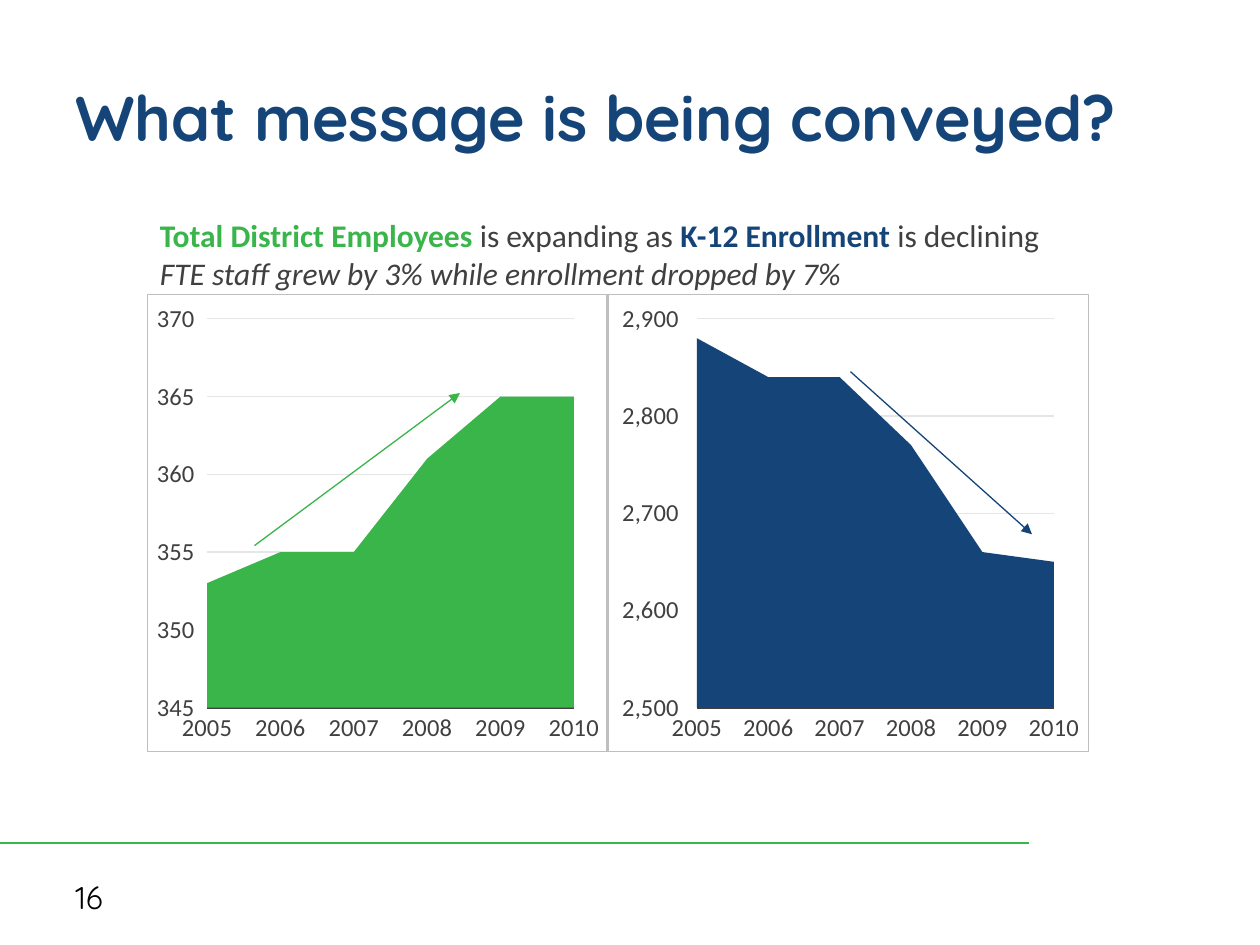
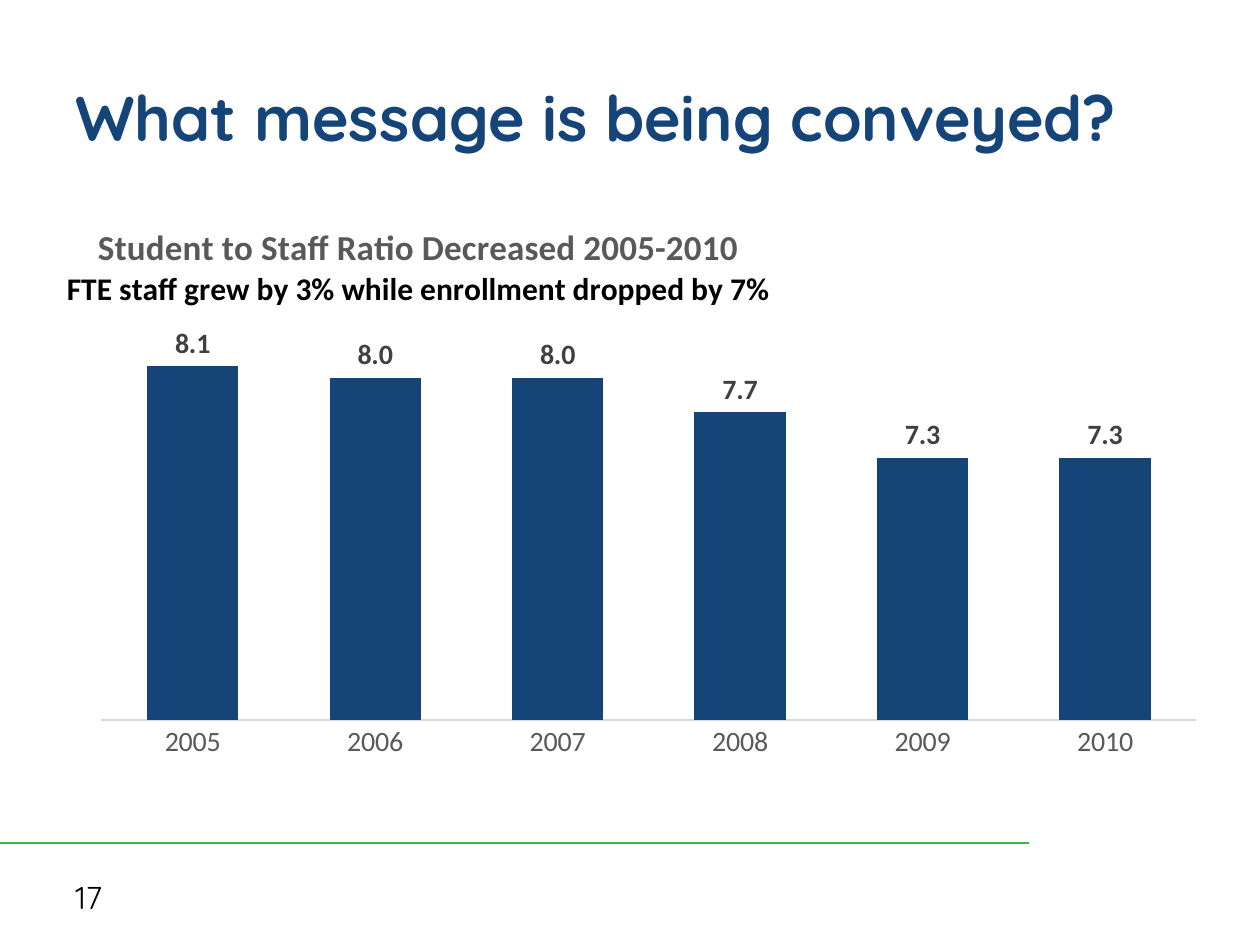
from lxml.etree import SubElement
from pptx import Presentation
from pptx.chart.data import CategoryChartData
from pptx.dml.color import RGBColor
from pptx.enum.chart import XL_CHART_TYPE as ChartType
from pptx.enum.chart import XL_LABEL_POSITION as LabelPosition
from pptx.enum.chart import XL_TICK_MARK as TickMark
from pptx.enum.shapes import MSO_CONNECTOR as Connector
from pptx.enum.text import MSO_ANCHOR as Anchor
from pptx.oxml import parse_xml
from pptx.oxml.ns import nsdecls, qn
from pptx.util import Pt

GREEN = RGBColor(0x39, 0xB5, 0x4A)
NAVY = RGBColor(0x15, 0x45, 0x78)
DARK_GRAY = RGBColor(0x40, 0x40, 0x40)
MID_GRAY = RGBColor(0x59, 0x59, 0x59)
AXIS_GRAY = RGBColor(0xD9, 0xD9, 0xD9)
GRID_GRAY = RGBColor(0xE6, 0xE6, 0xE6)
BLACK = RGBColor(0, 0, 0)
HEADING_FONT = "Quicksand"
BODY_FONT = "Calibri"
YEARS = ["2005", "2006", "2007", "2008", "2009", "2010"]
STAFF_NOTE = "FTE staff grew by 3% while enrollment dropped by 7%"
RATIO_WIDTH, RATIO_HEIGHT = 648, 318


def add_text(slide, box, lines, font_name, size, anchor=Anchor.TOP):
    shape = slide.shapes.add_textbox(*map(Pt, box))
    frame = shape.text_frame
    frame.word_wrap = True
    frame.vertical_anchor = anchor
    for index, runs in enumerate(lines):
        paragraph = frame.paragraphs[0] if index == 0 else frame.add_paragraph()
        paragraph.font.name = font_name
        paragraph.font.size = Pt(size)
        for text, color, bold, italic in runs:
            run = paragraph.add_run()
            run.text = text
            run.font.color.rgb = color
            run.font.bold = bold
            run.font.italic = italic


def add_line(slide, start, end, color, width, arrow=False):
    line = slide.shapes.add_connector(Connector.STRAIGHT, *map(Pt, start + end))
    line.line.color.rgb = color
    line.line.width = Pt(width)
    if arrow:
        SubElement(line.line._get_or_add_ln(), qn("a:tailEnd"), type="triangle")
    SubElement(line.element.spPr, qn("a:effectLst"))


presentation = Presentation()
presentation.slide_width = Pt(720)
presentation.slide_height = Pt(540)

slides = []
for number in ("16", "17"):
    slide = presentation.slides.add_slide(presentation.slide_layouts[6])
    add_line(slide, (0, 481.7), (588, 481.7), GREEN, 1.5)
    add_text(slide, (36, 498, 168, 28.8), [[(number, BLACK, False, False)]],
             HEADING_FONT, 18, Anchor.MIDDLE)
    add_text(slide, (36, 21.6, 648, 90),
             [[("What message is being conveyed?", NAVY, True, False)]],
             HEADING_FONT, 36, Anchor.MIDDLE)
    slides.append(slide)
trend_slide, ratio_slide = slides

add_text(trend_slide, (84.24, 120, 538.5, 72.5), [
    [("Total District Employees ", GREEN, True, False),
     ("is expanding as ", DARK_GRAY, False, False),
     ("K-12 Enrollment ", NAVY, True, False),
     ("is declining", DARK_GRAY, False, False)],
    [(STAFF_NOTE, DARK_GRAY, False, True)],
], BODY_FONT, 18)

chart_specs = [
    (trend_slide, ChartType.AREA_STACKED, (84, 168, 264, 262),
     [353, 355, 355, 361, 365, 365], GREEN, (345, 370, 5), "General"),
    (trend_slide, ChartType.AREA_STACKED, (346.5, 168, 276, 262),
     [2880, 2840, 2840, 2770, 2660, 2650], NAVY, (2500, 2900, 100), "_(#,##0_)"),
    (ratio_slide, ChartType.COLUMN_CLUSTERED, (36, 126, RATIO_WIDTH, RATIO_HEIGHT),
     [8.1, 8.0, 8.0, 7.7, 7.3, 7.3], NAVY, (5, 8.3, 1), "0.0"),
]
for slide, chart_type, box, values, color, scale, number_format in chart_specs:
    is_area = chart_type == ChartType.AREA_STACKED
    data = CategoryChartData(number_format=number_format)
    data.categories = YEARS
    data.add_series("Series 1", values)
    chart = slide.shapes.add_chart(chart_type, *map(Pt, box), data).chart
    chart.has_legend = False
    chart.has_title = False
    chart.font.name = BODY_FONT
    chart.font.size = Pt(10)
    chart.font.color.rgb = BLACK
    plot = chart.plots[0]
    plot.vary_by_categories = False
    fill = plot.series[0].format.fill
    fill.solid()
    fill.fore_color.rgb = color

    category_axis = chart.category_axis
    category_axis.has_major_gridlines = False
    category_axis.major_tick_mark = TickMark.NONE
    category_axis.tick_labels.font.size = Pt(14 if is_area else 16)
    category_axis.tick_labels.font.color.rgb = DARK_GRAY if is_area else MID_GRAY
    category_axis.format.line.color.rgb = DARK_GRAY if is_area else AXIS_GRAY
    category_axis.format.line.width = Pt(1.5 if is_area else 0.75)

    value_axis = chart.value_axis
    value_axis.minimum_scale, value_axis.maximum_scale, value_axis.major_unit = scale
    value_axis.has_major_gridlines = is_area
    value_axis.visible = is_area
    if is_area:
        value_axis.format.line.fill.background()
        value_axis.major_gridlines.format.line.color.rgb = GRID_GRAY
        value_axis.major_gridlines.format.line.width = Pt(0.75)
        labels = value_axis.tick_labels
        labels.font.size = Pt(14)
        labels.font.color.rgb = DARK_GRAY
        labels.number_format = number_format
        labels.number_format_is_linked = False
        chart.element.xpath(".//c:crossBetween")[0].set("val", "midCat")
        chart.element.find(qn("c:chart")).addnext(parse_xml(
            f'<c:spPr {nsdecls("c", "a")}><a:noFill/><a:ln w="9525"><a:solidFill>'
            '<a:srgbClr val="BFBFBF"/></a:solidFill></a:ln></c:spPr>'))

add_line(trend_slide, (145.4, 311.8), (262.8, 224.6), GREEN, 0.75, arrow=True)
add_line(trend_slide, (486, 212.4), (589.7, 305.3), NAVY, 0.75, arrow=True)

ratio_chart = chart
plot.gap_width = 100
plot.overlap = 9
plot.has_data_labels = True
labels = plot.data_labels
labels.show_value = True
labels.position = LabelPosition.OUTSIDE_END
labels.number_format = "0.0"
labels.number_format_is_linked = False
labels.font.name = BODY_FONT
labels.font.size = Pt(16)
labels.font.bold = True
labels.font.color.rgb = DARK_GRAY

title_frame = ratio_chart.chart_title.text_frame
title_frame.text = f"Student to Staff Ratio Decreased 2005-2010\n{STAFF_NOTE}"
for paragraph, size, color in zip(title_frame.paragraphs, (20, 18), (MID_GRAY, BLACK)):
    paragraph.font.name = BODY_FONT
    paragraph.font.size = Pt(size)
    paragraph.font.bold = True
    paragraph.font.color.rgb = color

title = ratio_chart.element.xpath("c:chart/c:title")[0]
plot_area = ratio_chart.element.xpath("c:chart/c:plotArea")[0]
for parent, layout_values in (
    (title, {"xMode": "edge", "yMode": "edge", "x": 0, "y": 0}),
    (plot_area, {"layoutTarget": "inner", "xMode": "edge", "yMode": "edge",
                 "x": 22 / RATIO_WIDTH, "y": 70.3 / RATIO_HEIGHT,
                 "w": 626 / RATIO_WIDTH, "h": 215.3 / RATIO_HEIGHT}),
):
    for old_layout in parent.findall(qn("c:layout")):
        parent.remove(old_layout)
    settings = "".join(f'<c:{key} val="{value}"/>' for key, value in layout_values.items())
    layout = parse_xml(f'<c:layout {nsdecls("c")}><c:manualLayout>{settings}'
                       '</c:manualLayout></c:layout>')
    parent.insert(1 if parent is title else 0, layout)

presentation.save("out.pptx")
